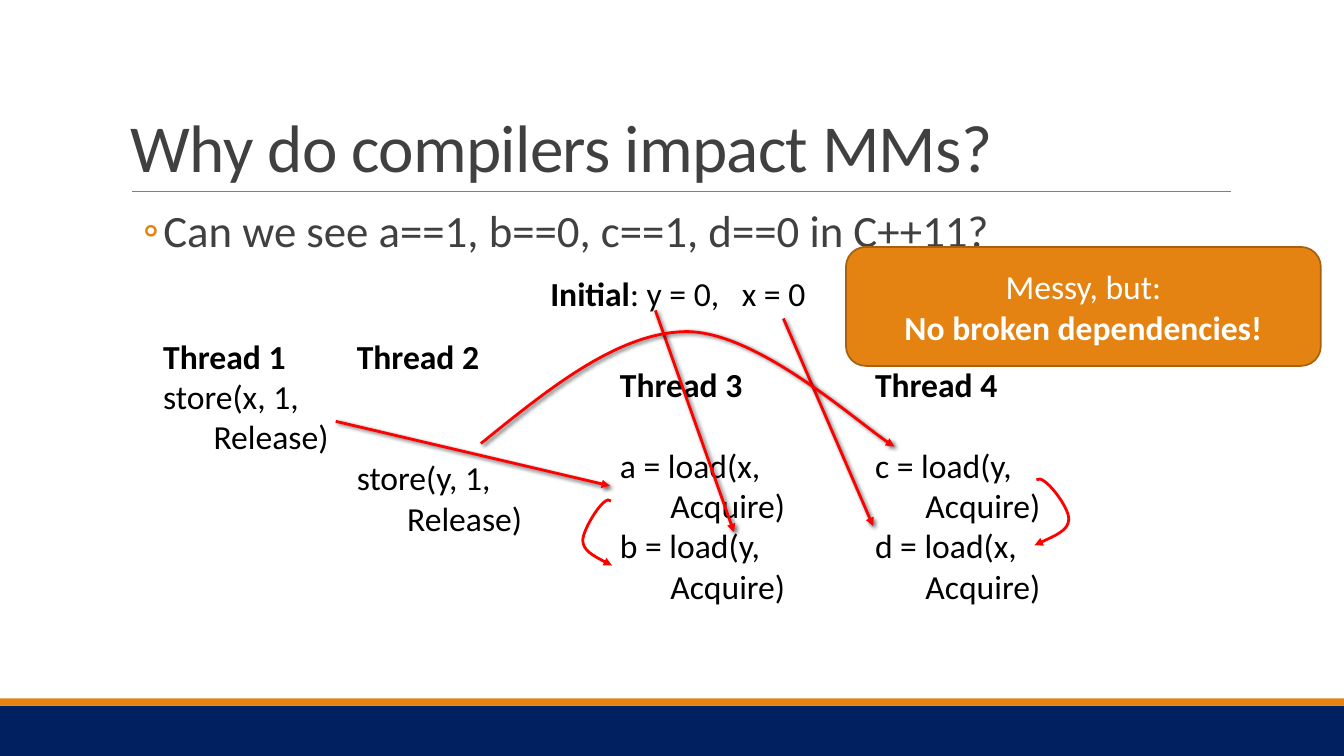
from dataclasses import dataclass
from lxml.etree import SubElement
from pptx import Presentation
from pptx.dml.color import RGBColor as RGB
from pptx.enum.shapes import MSO_CONNECTOR as Link, MSO_SHAPE as Kind
from pptx.enum.text import MSO_ANCHOR as Anchor, PP_ALIGN as Align
from pptx.oxml.ns import qn
from pptx.util import Pt

PX = 9144


@dataclass(frozen=True)
class Theme:
    font: str = "Calibri"
    title: int = 48
    lead: int = 32
    body: int = 24
    line: int = 29
    navy: str = "002060"
    amber: str = "E48312"
    rust: str = "A9610D"
    rule: str = "808080"
    gray: str = "404040"
    black: str = "000000"
    white: str = "FFFFFF"
    red: str = "FF0000"


def node(parent, tag, **attrs):
    return SubElement(parent, qn("a:" + tag), attrs)


class Board:
    def __init__(self, deck, theme):
        self.theme = theme
        self.slide = deck.slides.add_slide(deck.slide_layouts[6])
        self.shapes = self.slide.shapes

    def box(self, kind, x, y, w, h, fill, edge=None):
        shape = self.shapes.add_shape(kind, x * PX, y * PX, w * PX, h * PX)
        shape.shadow.inherit = False
        shape.fill.solid()
        shape.fill.fore_color.rgb = RGB.from_string(fill)
        if edge:
            shape.line.color.rgb = RGB.from_string(edge)
            shape.line.width = Pt(1.25)
        else:
            shape.line.fill.background()
        return shape

    def text(self, x, y, w, h, anchor=Anchor.TOP, side=10):
        shape = self.shapes.add_textbox(x * PX, y * PX, w * PX, h * PX)
        frame = shape.text_frame
        frame.word_wrap = True
        frame.vertical_anchor = anchor
        frame.margin_left = frame.margin_right = side * PX
        return shape

    def para(self, shape, first=False):
        frame = shape.text_frame
        return frame.paragraphs[0] if first else frame.add_paragraph()

    def run(self, para, words, size=None, color=None, bold=False):
        run = para.add_run()
        run.text = words
        font = run.font
        font.name = self.theme.font
        font.size = Pt(size or self.theme.body)
        font.bold = bold
        font.color.rgb = RGB.from_string(color or self.theme.black)
        return run

    def thread(self, name, x, y, h, gap, calls, order):
        shape = self.text(x, y, 192, h)
        self.run(self.para(shape, True), name, bold=True)
        for spot, call in enumerate(calls):
            para = self.para(shape)
            if spot == 0:
                para.space_before = Pt(gap * self.theme.line)
            self.run(para, call)
            para = self.para(shape)
            para._p.get_or_add_pPr().set("marL", str(50 * PX))
            self.run(para, order)
        return shape

    def stroke(self, shape, end=None, shade=False, color=None, width=2):
        shape.line.color.rgb = RGB.from_string(color or self.theme.red)
        shape.line.width = Pt(width)
        if end:
            node(shape.line._get_or_add_ln(), end, type="triangle")
        glow = node(shape._element.spPr, "effectLst")
        if shade:
            drop = node(glow, "outerShdw", blurRad=str(Pt(3)), dist=str(Pt(2)),
                        dir="2700000", algn="tl", rotWithShape="0")
            tint = node(drop, "srgbClr", val=self.theme.black)
            node(tint, "alpha", val="60000")

    def line(self, x1, y1, x2, y2, goal=None, **style):
        link = self.shapes.add_connector(
            Link.STRAIGHT, x1 * PX, y1 * PX, x2 * PX, y2 * PX)
        if goal is not None:
            link.end_connect(goal, 1)
        self.stroke(link, **style)

    def curve(self, points, **style):
        form = self.shapes.build_freeform(*points[0], scale=PX)
        form.add_line_segments(points[1:], close=False)
        shape = form.convert_to_shape()
        route = next(shape._element.iter(qn("a:path")))
        steps = route.findall(qn("a:lnTo"))
        for at in range(0, len(steps), 3):
            bend = node(route, "cubicBezTo")
            for step in steps[at:at + 3]:
                bend.append(step[0])
                route.remove(step)
        shape.fill.background()
        self.stroke(shape, **style)


def main():
    theme = Theme()
    deck = Presentation()
    deck.slide_width, deck.slide_height = 1333 * PX, 750 * PX
    board = Board(deck, theme)

    board.box(Kind.RECTANGLE, 0, 700, 1333, 50, theme.navy)
    board.box(Kind.RECTANGLE, 0, 693, 1333, 7, theme.amber)
    board.line(131, 190, 1221, 190, color=theme.rule, width=0.5)

    title = board.para(board.text(120, 31, 1100, 159, Anchor.BOTTOM), True)
    title.line_spacing = 0.85
    run = board.run(title, "Why do compilers impact MMs?", theme.title, theme.gray)
    run.font._element.set("spc", "-50")

    ask = board.para(board.text(120, 202, 1100, 88, side=0), True)
    props = ask._p.get_or_add_pPr()
    props.set("marL", str(42 * PX))
    props.set("indent", str(-20 * PX))
    node(node(props, "buClr"), "srgbClr", val=theme.amber)
    node(props, "buFont", typeface=theme.font)
    node(props, "buChar", char="◦")
    ask.line_spacing = 0.9
    ask.space_after = Pt(4)
    board.run(ask, "Can we see a==1, b==0, c==1, d==0 in C++11?",
              theme.lead, theme.gray)

    start = board.para(board.text(536, 266, 480, 50), True)
    tabs = node(start._p.get_or_add_pPr(), "tabLst")
    node(tabs, "tab", pos=str(190 * PX), algn="l")
    board.run(start, "Initial", bold=True)
    board.run(start, ": y = 0,\tx = 0")

    threads = [
        ("Thread 1", 152, 328, 131, 0, ["store(x, 1,"], "Release)"),
        ("Thread 2", 344, 328, 212, 2, ["store(y, 1,"], "Release)"),
        ("Thread 4", 858, 356, 252, 1, ["c = load(y,", "d = load(x,"], "Acquire)"),
        ("Thread 3", 605, 356, 252, 1, ["a = load(x,", "b = load(y,"], "Acquire)"),
    ]
    cols = {row[0]: board.thread(*row) for row in threads}

    arrow = dict(end="tailEnd", shade=True)
    board.line(333, 418, 605, 482, goal=cols["Thread 3"], **arrow)
    board.line(650, 308, 728, 528, **arrow)
    board.line(777, 316, 866, 522, **arrow)

    note = board.box(Kind.ROUNDED_RECTANGLE, 839, 245, 471, 118,
                     theme.amber, theme.rust)
    note.text_frame.word_wrap = True
    note.text_frame.vertical_anchor = Anchor.MIDDLE
    for first, words in ((True, "Messy, but:"), (False, "No broken dependencies!")):
        para = board.para(note, first)
        para.alignment = Align.CENTER
        board.run(para, words, color=theme.white, bold=not first)

    board.curve([(477, 440), (545, 385), (614, 329), (682, 329),
                 (751, 330), (857, 425), (887, 443)], **arrow)
    board.curve([(607, 561), (593, 554), (578, 546), (578, 536),
                 (578, 525), (600, 489), (606, 497)], end="headEnd")
    board.curve([(1026, 541), (1043, 533), (1060, 526), (1060, 515),
                 (1061, 504), (1035, 469), (1028, 476)], end="headEnd")

    deck.save("out.pptx")


if __name__ == "__main__":
    main()
